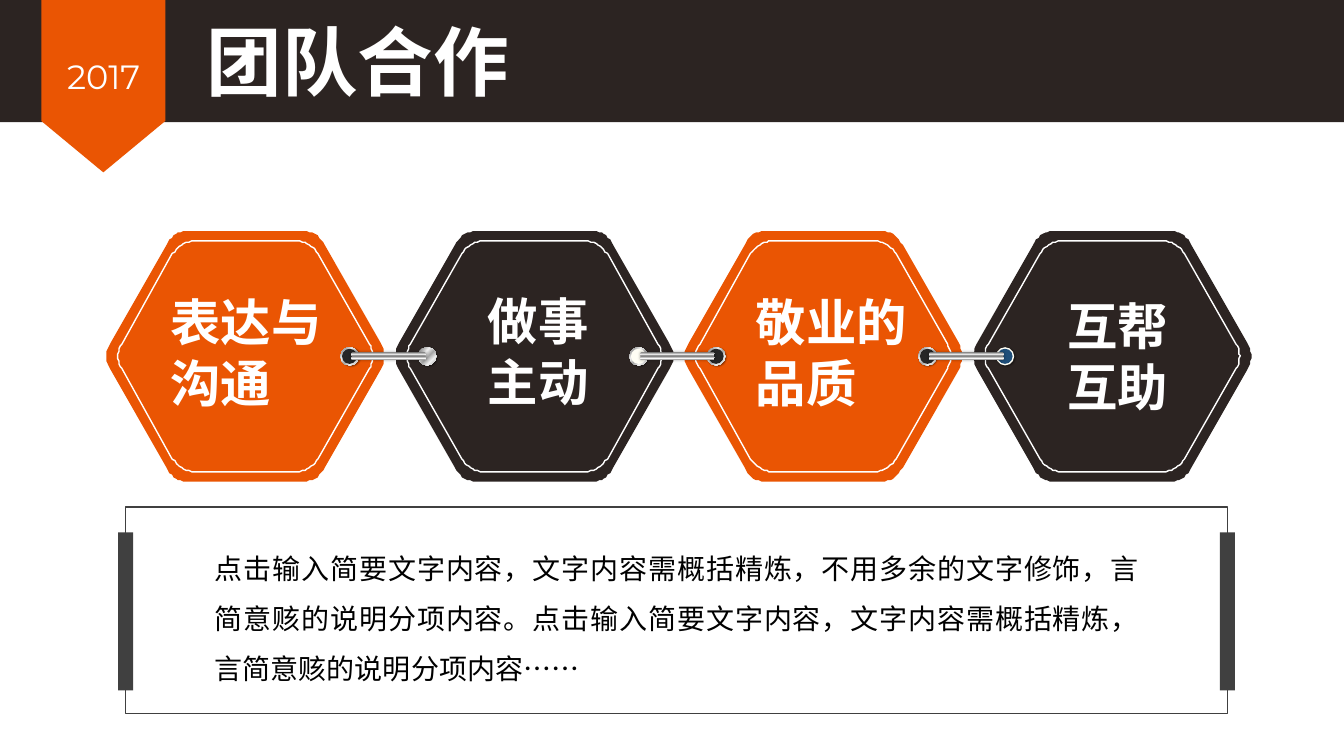
from dataclasses import dataclass
from typing import Any, Optional

from pptx import Presentation
from pptx import oxml
from pptx.dml.color import RGBColor
from pptx.enum import shapes as kinds
from pptx.enum import text as texts
from pptx.oxml import ns
from pptx.util import Pt

ORANGE = RGBColor(0xEA, 0x55, 0x03)
DARK = RGBColor(0x2C, 0x24, 0x22)
GREY = RGBColor(0x40, 0x40, 0x40)
WHITE = RGBColor(0xFF, 0xFF, 0xFF)
BLACK = RGBColor(0, 0, 0)
HOLE = RGBColor(0x26, 0x26, 0x26)
IVORY = RGBColor(0xFF, 0xFE, 0xF5)
BLUE = RGBColor(0x1F, 0x4E, 0x79)

CHINESE = "Noto Sans CJK SC"
LATIN = "Montserrat"
PITCH = 206.4
FIRST_CENTRE = 175.3
MIDDLE = 254.5
HALF_WIDTH, HALF_HEIGHT, CORNER = 102, 89.6, 11
INNER_SCALE = 0.917
RING, DOT, RING_GAP = 13, 10.8, 55.4
KIND = kinds.MSO_SHAPE


@dataclass(frozen=True)
class Gradient:
    stops: tuple[tuple[int, str], ...]
    angle: int
    turns_with_shape: bool


@dataclass(frozen=True)
class Shadow:
    blur: float
    distance: float
    angle: int


@dataclass(frozen=True)
class Hexagon:
    label: str
    colour: RGBColor
    left: float
    top: float
    width: float


@dataclass(frozen=True)
class Stud:
    ring: Any
    dot: Optional[RGBColor]


METAL = Gradient(((0, "FFFFFF"), (17, "A6A6A6"), (35, "F2F2F2"), (55, "A6A6A6"),
                  (75, "F2F2F2"), (100, "A6A6A6")), 45, True)
STEEL = Gradient(((0, "808080"), (23, "A6A6A6"), (52, "D9D9D9"), (74, "FFFFFF"),
                  (100, "A6A6A6")), 90, False)
RING_SHADOW = Shadow(1, 1, 45)
BAR_SHADOW = Shadow(2, 0, 0)

HEXAGONS = (
    Hexagon("表达与沟通", ORANGE, 121.7, 208, 119.5),
    Hexagon("做事主动", DARK, 348.5, 207.4, 103),
    Hexagon("敬业的品质", ORANGE, 540, 208, 114.5),
    Hexagon("互帮互助", DARK, 762.5, 211, 105.8),
)
LINKS = (
    (Stud(METAL, HOLE), Stud(METAL, None)),
    (Stud(METAL, IVORY), Stud(METAL, HOLE)),
    (Stud(METAL, HOLE), Stud(IVORY, BLUE)),
)


def paint(shape: Any, fill: Any = None, line: Optional[RGBColor] = None,
          shadow: Optional[Shadow] = None) -> None:
    """Set the fill (colour, gradient or none), the outline and the shadow."""
    properties = shape.element.spPr
    if isinstance(fill, RGBColor):
        shape.fill.solid()
        shape.fill.fore_color.rgb = fill
    else:
        shape.fill.background()
    if isinstance(fill, Gradient):
        stops = "".join(f'<a:gs pos="{place * 1000}"><a:srgbClr val="{colour}"/></a:gs>'
                        for place, colour in fill.stops)
        properties.replace(properties.find(ns.qn("a:noFill")), oxml.parse_xml(
            f'<a:gradFill {ns.nsdecls("a")} rotWithShape="{int(fill.turns_with_shape)}">'
            f'<a:gsLst>{stops}</a:gsLst>'
            f'<a:lin ang="{fill.angle * 60000}" scaled="0"/></a:gradFill>'))
    if line is None:
        shape.line.fill.background()
    else:
        shape.line.color.rgb = line
        shape.line.width = Pt(1)
    shape.shadow.inherit = False
    if shadow:
        properties.find(ns.qn("a:effectLst")).append(oxml.parse_xml(
            f'<a:outerShdw {ns.nsdecls("a")} blurRad="{Pt(shadow.blur)}" '
            f'dist="{Pt(shadow.distance)}" dir="{shadow.angle * 60000}" algn="ctr" '
            'rotWithShape="0"><a:srgbClr val="000000"><a:alpha val="40000"/>'
            '</a:srgbClr></a:outerShdw>'))


def add_preset(parent: Any, kind: Any, left: float, top: float, width: float, height: float,
               adjust: Optional[float] = None, turn: float = 0, **format: Any) -> Any:
    shape = parent.add_shape(kind, Pt(left), Pt(top), Pt(width), Pt(height))
    if adjust is not None:
        shape.adjustments[0] = adjust
    shape.rotation = turn
    paint(shape, **format)
    return shape


def write(box: Any, words: str, *, size: float, font: str = CHINESE, colour: RGBColor = WHITE,
          bold: bool = False, align: Any = texts.PP_ALIGN.LEFT, spacing: float = 1,
          wrap: bool = True, margins: tuple[float, float] = (0, 0)) -> None:
    frame = box.text_frame
    frame.word_wrap = wrap
    frame.auto_size = texts.MSO_AUTO_SIZE.SHAPE_TO_FIT_TEXT
    frame.vertical_anchor = texts.MSO_ANCHOR.TOP
    frame.margin_left = frame.margin_right = Pt(margins[0])
    frame.margin_top = frame.margin_bottom = Pt(margins[1])
    para = frame.paragraphs[0]
    para.alignment = align
    para.line_spacing = spacing
    span = para.add_run()
    span.text = words
    span.font.size = Pt(size)
    span.font.bold = bold
    span.font.color.rgb = colour
    span.font.name = font
    span.font._element.append(oxml.parse_xml(
        f'<a:ea {ns.nsdecls("a")} typeface="{font}"/>'))


def add_text(parent: Any, words: str, left: float, top: float, width: float, height: float,
             **format: Any) -> None:
    write(parent.add_textbox(Pt(left), Pt(top), Pt(width), Pt(height)), words, **format)


def add_hexagon(parent: Any, centre: float, scale: float = 1, **format: Any) -> None:
    """Draw a hexagon whose corners are rounded by quadratic curves."""
    wide, high, cut = HALF_WIDTH * scale, HALF_HEIGHT * scale, CORNER * scale
    corners = [(centre + x * wide, MIDDLE + y * high) for x, y in
               ((-1, 0), (-0.5, -1), (0.5, -1), (1, 0), (0.5, 1), (-0.5, 1))]
    share = cut / wide
    steps = 10
    outline = []
    for index, corner in enumerate(corners):
        before, after = corners[index - 1], corners[(index + 1) % 6]
        for step in range(steps + 1):
            t = step / steps
            back, ahead = share * (1 - t) ** 2, share * t ** 2
            outline.append(tuple(c + back * (b - c) + ahead * (a - c)
                                 for b, c, a in zip(before, corner, after)))
    builder = parent.build_freeform(*outline[0], scale=Pt(1))
    builder.add_line_segments(outline[1:], close=True)
    paint(builder.convert_to_shape(), **format)


def add_link(page: Any, left: float, studs: tuple[Stud, Stud]) -> None:
    group = page.shapes.add_group_shape().shapes
    inset = (RING - DOT) / 2
    for index, stud in enumerate(studs):
        x, y = left + index * RING_GAP, MIDDLE - RING / 2
        add_preset(group, KIND.OVAL, x, y, RING, RING, fill=stud.ring, shadow=RING_SHADOW)
        if stud.dot is not None:
            add_preset(group, KIND.OVAL, x + inset, y + inset, DOT, DOT, fill=stud.dot)
    for top in (226.2, 229):
        add_preset(group, KIND.ROUNDED_RECTANGLE, left + 33.2, top, 2.2, 53.3, adjust=0.5,
                   turn=90, fill=STEEL, shadow=BAR_SHADOW)


def main() -> None:
    deck = Presentation()
    deck.slide_width, deck.slide_height = Pt(960), Pt(540)
    page = deck.slides.add_slide(deck.slide_layouts[5])
    parts = page.shapes

    add_preset(parts, KIND.RECTANGLE, 0, 0, 960, 87.3, fill=DARK)
    add_preset(parts, KIND.PENTAGON, 12.3, 17.3, 123, 88.6, adjust=0.414, turn=90, fill=ORANGE)
    add_text(parts, "2017", 34.5, 36.5, 79, 36, size=24, font=LATIN, wrap=False,
             align=texts.PP_ALIGN.CENTER, margins=(7.2, 3.6))
    title = parts.title
    title.left, title.top, title.width, title.height = Pt(142.5), Pt(8), Pt(333.5), Pt(70.5)
    write(title, "团队合作", size=54, bold=True, margins=(5, 2.9))
    title.element.getparent().append(title.element)

    add_text(parts, "点击输入简要文字内容，文字内容需概括精炼，不用多余的文字修饰，言简意赅的说明分项内容。"
             "点击输入简要文字内容，文字内容需概括精炼，言简意赅的说明分项内容……",
             153.4, 381.6, 660.2, 108.7, size=20, colour=BLACK,
             align=texts.PP_ALIGN.JUSTIFY, spacing=1.5)
    add_preset(parts, KIND.RECTANGLE, 89.8, 362.2, 787, 147.6, line=GREY)
    for left in (84.3, 871.3):
        add_preset(parts, KIND.RECTANGLE, left, 380.2, 10.8, 113, fill=GREY)

    for index, item in enumerate(HEXAGONS):
        centre = FIRST_CENTRE + index * PITCH
        add_hexagon(parts, centre, fill=item.colour)
        add_text(parts, item.label, item.left, item.top, item.width, 87, size=36, bold=True)
        add_hexagon(parts, centre, INNER_SCALE, line=WHITE)
    for index, studs in enumerate(LINKS):
        add_link(page, 243.2 + index * PITCH, studs)
    deck.save("out.pptx")


if __name__ == "__main__":
    main()
